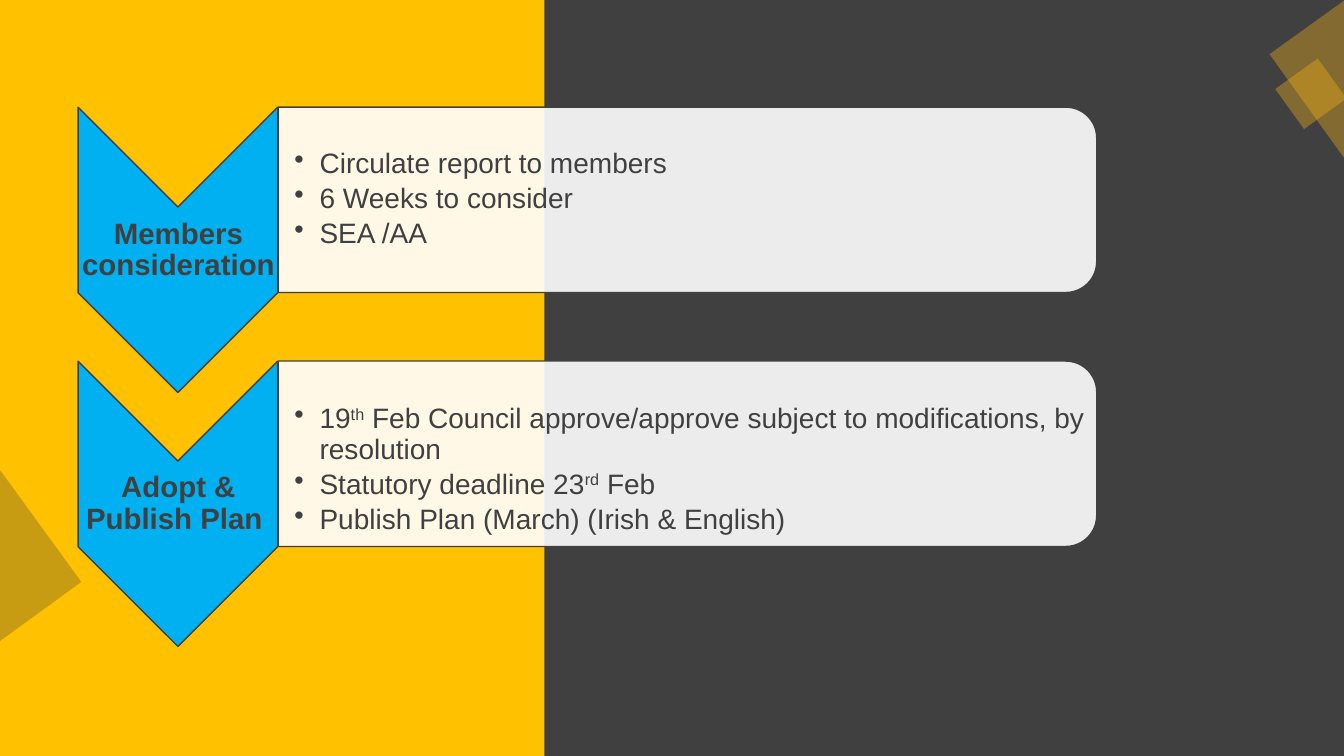
import pptx
import pptx.util
import pptx.dml.color
import pptx.enum.shapes
import pptx.enum.text
import pptx.oxml
import pptx.oxml.ns

THEME = {
    "dark": "414040", "yellow": "FFC100", "amber": "F5B317", "blue": "00B0F0", "white": "FFFFFF",
    "font": "Arial", "heading_size": 21, "bullet_size": 20, "line_width": 1,
}
SHAPES = pptx.enum.shapes.MSO_SHAPE
ALIGN = pptx.enum.text.PP_ALIGN

presentation = pptx.Presentation()
presentation.slide_width = pptx.util.Inches(13.33)
presentation.slide_height = pptx.util.Inches(7.5)
cell = presentation.slide_width / 160
slide = presentation.slides.add_slide(presentation.slide_layouts[6])
slide.background.fill.solid()
slide.background.fill.fore_color.rgb = pptx.dml.color.RGBColor.from_string(THEME["dark"])


def add_block(kind, box, color, rotation=0, opacity=100, outlined=False):
    shape = slide.shapes.add_shape(kind, *[round(value * cell) for value in box])
    shape.shadow.inherit = False
    shape.rotation = rotation
    shape.fill.solid()
    shape.fill.fore_color.rgb = pptx.dml.color.RGBColor.from_string(THEME[color])
    if opacity < 100:
        color_element = shape._element.spPr.find(".//" + pptx.oxml.ns.qn("a:srgbClr"))
        alpha = pptx.oxml.parse_xml(f'<a:alpha {pptx.oxml.ns.nsdecls("a")} val="{opacity * 1000}"/>')
        color_element.append(alpha)
    if outlined:
        shape.line.color.rgb = pptx.dml.color.RGBColor.from_string(THEME["dark"])
        shape.line.width = pptx.util.Pt(THEME["line_width"])
    else:
        shape.line.fill.background()


def add_text(box, paragraphs, size, bold, align, space_after, left_inset, top_inset, bulleted):
    shape = slide.shapes.add_textbox(*[round(value * cell) for value in box])
    frame = shape.text_frame
    frame_format = {
        "word_wrap": True,
        "vertical_anchor": pptx.enum.text.MSO_ANCHOR.MIDDLE,
        "margin_left": pptx.util.Inches(left_inset),
        "margin_top": pptx.util.Inches(top_inset),
        "margin_right": pptx.util.Inches(0.01),
        "margin_bottom": pptx.util.Inches(0.01),
    }
    for name, value in frame_format.items():
        setattr(frame, name, value)
    for index, pieces in enumerate(paragraphs):
        paragraph = frame.add_paragraph() if index else frame.paragraphs[0]
        paragraph_format = {"alignment": align, "line_spacing": 0.9, "space_after": pptx.util.Pt(space_after)}
        for name, value in paragraph_format.items():
            setattr(paragraph, name, value)
        if bulleted:
            properties = paragraph._p.get_or_add_pPr()
            properties.set("marL", str(pptx.util.Inches(0.25)))
            properties.set("indent", str(pptx.util.Inches(-0.25)))
            properties.append(pptx.oxml.parse_xml(f'<a:buChar {pptx.oxml.ns.nsdecls("a")} char="•"/>'))
        for position, piece in enumerate(pieces):
            run = paragraph.add_run()
            run.text = piece
            run_format = {"name": THEME["font"], "size": pptx.util.Pt(size), "bold": bold}
            for name, value in run_format.items():
                setattr(run.font, name, value)
            run.font.color.rgb = pptx.dml.color.RGBColor.from_string(THEME["dark"])
            if position % 2:
                run._r.get_or_add_rPr().set("baseline", "30000")


add_block(SHAPES.RECTANGLE, (0, 0, 64.8, 90), "yellow")
squares = [
    ((-9, 59.04, 15.36, 16.32), "dark", 324, 29),
    ((154.56, -0.24, 15.36, 16.32), "amber", 234.3, 37),
    ((153.12, 8.04, 5.88, 6.24), "amber", 234.3, 37),
]
for box, color, rotation, opacity in squares:
    add_block(SHAPES.RECTANGLE, box, color, rotation, opacity)

steps = [
    ("Members consideration", 0.01, [
        ["Circulate report to members"],
        ["6 Weeks to consider"],
        ["SEA /AA"],
    ]),
    ("Adopt & Publish Plan ", 0.34, [
        ["19", "th", " Feb Council approve/approve subject to modifications, by resolution"],
        ["Statutory deadline 23", "rd", " Feb"],
        ["Publish Plan (March) (Irish & English)"],
    ]),
]
row_pitch = 30.24
for row, (heading, top_inset, bullets) in enumerate(steps):
    offset = row * row_pitch
    add_block(SHAPES.CHEVRON, (4.2, 17.88 + offset, 33.96, 23.76), "blue", 90, outlined=True)
    add_text((9.36, 24.72 + offset, 23.76, 10.2), [[heading]], THEME["heading_size"], True,
             ALIGN.CENTER, 7.35, 0.01, 0.01, False)
    add_block(SHAPES.ROUND_2_SAME_RECTANGLE, (70.8, -24.92 + offset, 22.08, 97.44), "white", 90, 90, True)
    add_text((33.12, 13.8 + offset, 96.36, 19.92), bullets, THEME["bullet_size"], False,
             ALIGN.LEFT, 3.5, 0.16, top_inset, True)

presentation.save("out.pptx")
